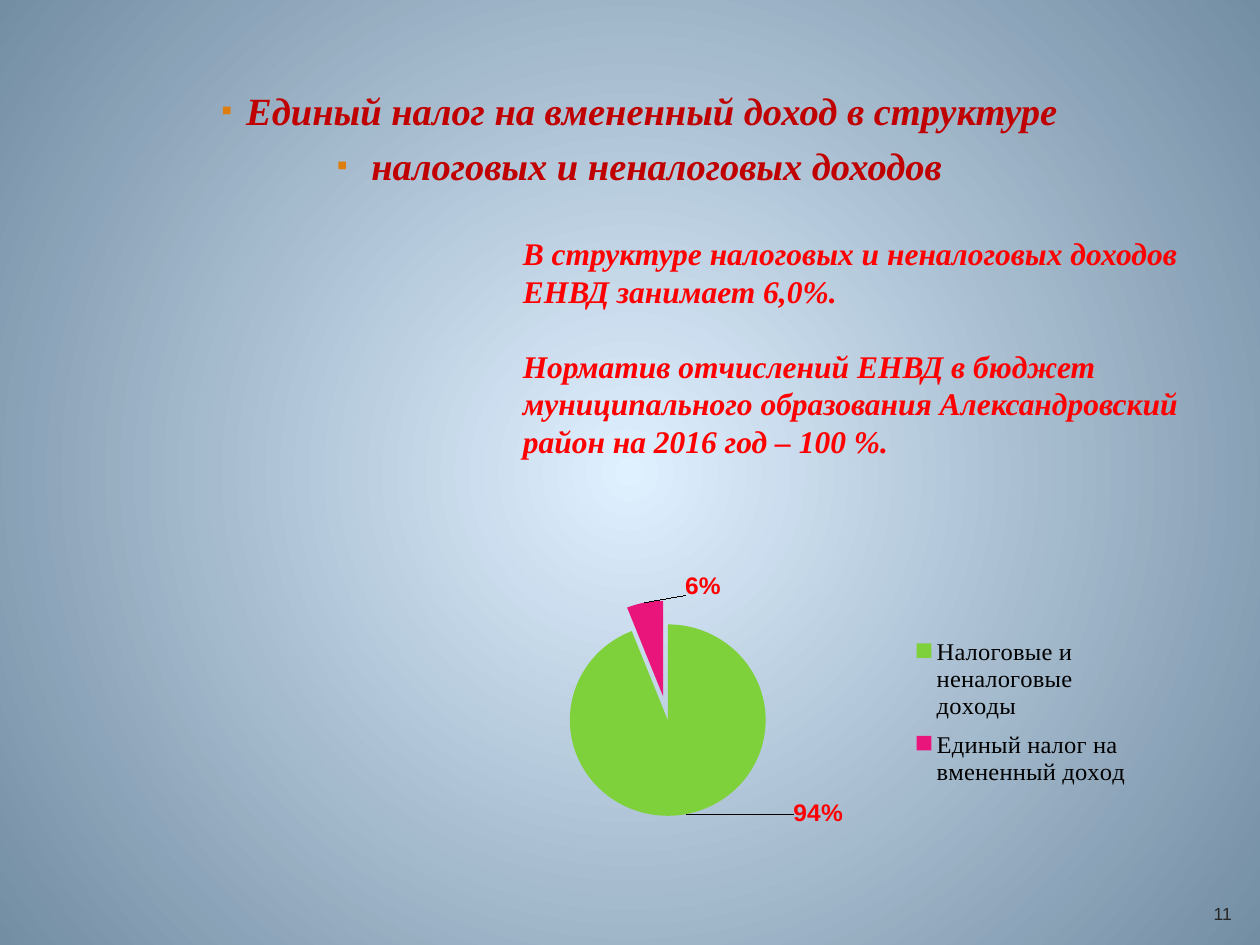
from lxml import etree
from pptx import Presentation
from pptx.chart.data import CategoryChartData
from pptx.dml.color import RGBColor
from pptx.enum.chart import XL_CHART_TYPE, XL_LEGEND_POSITION
from pptx.enum.text import MSO_ANCHOR, PP_ALIGN
from pptx.oxml import parse_xml
from pptx.oxml.ns import nsdecls, qn
from pptx.util import Cm, Pt

PIE = XL_CHART_TYPE.PIE
LEGEND_RIGHT = XL_LEGEND_POSITION.RIGHT
CENTER = PP_ALIGN.CENTER
LEFT = PP_ALIGN.LEFT
MIDDLE = MSO_ANCHOR.MIDDLE

SKY = RGBColor(0xDF, 0xF0, 0xFF)
SLATE = RGBColor(0x73, 0x8D, 0xA3)
DARK_RED = RGBColor(0xC0, 0x00, 0x00)
RED = RGBColor(0xFF, 0x00, 0x00)
ORANGE = RGBColor(0xDD, 0x7E, 0x0E)
GREEN = RGBColor(0x7F, 0xD1, 0x3B)
PINK = RGBColor(0xEA, 0x15, 0x7A)
BLACK = RGBColor(0x00, 0x00, 0x00)
CHARCOAL = RGBColor(0x26, 0x26, 0x26)

SERIF = "Times New Roman"
SANS = "Arial"


def style_font(font, name, size, color, bold=False, italic=False):
    font.name = name
    font.size = Pt(size)
    font.color.rgb = color
    font.bold = bold
    font.italic = italic


def paint_background(page):
    """Radial gradient from a light centre to darker corners."""
    fill = page.background.fill
    fill.gradient()
    for stop, color in zip(fill.gradient_stops, (SKY, SLATE)):
        stop.color.rgb = color
    gradient = page.background._cSld.find(".//" + qn("a:gradFill"))
    linear = gradient.find(qn("a:lin"))
    gradient.replace(linear, parse_xml(
        f'<a:path {nsdecls("a")} path="circle">'
        '<a:fillToRect l="50000" t="50000" r="50000" b="50000"/></a:path>'))


def add_text(page, area, lines, align, space_before, **style):
    """Text box with one run per line; space_before holds points per line."""
    box = page.shapes.add_textbox(*area)
    frame = box.text_frame
    frame.word_wrap = True
    for index, (line, space) in enumerate(zip(lines, space_before)):
        para = frame.paragraphs[0] if index == 0 else frame.add_paragraph()
        para.alignment = align
        para.space_before = Pt(space)
        span = para.add_run()
        span.text = line
        style_font(span.font, **style)
    return frame


def add_bullet(para):
    properties = para._p.get_or_add_pPr()
    properties.set("marL", str(Cm(0.5)))
    properties.set("indent", str(-Cm(0.5)))
    color = etree.SubElement(properties, qn("a:buClr"))
    etree.SubElement(color, qn("a:srgbClr"), val=str(ORANGE))
    etree.SubElement(properties, qn("a:buSzPct"), val="80000")
    etree.SubElement(properties, qn("a:buFont"), typeface=SANS)
    etree.SubElement(properties, qn("a:buChar"), char="▪")


def add_heading(page, area):
    frame = add_text(
        page, area,
        ["Единый налог на вмененный доход в структуре",
         " налоговых и неналоговых доходов"],
        CENTER, (5, 5), name=SERIF, size=22, color=DARK_RED,
        bold=True, italic=True)
    for para in frame.paragraphs:
        add_bullet(para)


def add_explanation(page, area):
    add_text(
        page, area,
        ["В структуре налоговых и неналоговых доходов ЕНВД занимает 6,0%.",
         "Норматив отчислений ЕНВД в бюджет муниципального образования "
         "Александровский район на 2016 год – 100 %."],
        LEFT, (0, 21), name=SERIF, size=18, color=RED, bold=True, italic=True)


def add_page_number(page, area):
    frame = add_text(page, area, ["11"], CENTER, (0,),
                     name=SANS, size=10, color=CHARCOAL)
    frame.vertical_anchor = MIDDLE


def manual_layout(x, y, width=None, height=None):
    """Chart layout in shares of the chart; without a size, it is an offset."""
    values = {"x": x, "y": y}
    modes = ""
    if width:
        values.update(w=width, h=height)
        modes = '<c:xMode val="edge"/><c:yMode val="edge"/>'
    parts = "".join(f'<c:{key} val="{value}"/>' for key, value in values.items())
    return parse_xml(f'<c:layout {nsdecls("c")}><c:manualLayout>{modes}{parts}'
                     '</c:manualLayout></c:layout>')


def set_layout(parent, layout, after=None):
    for old in parent.findall(qn("c:layout")):
        parent.remove(old)
    if after is None:
        parent.insert(0, layout)
    else:
        parent.find(qn(after)).addnext(layout)


def add_share_pie(page, area):
    data = CategoryChartData(number_format="0%")
    data.categories = ["Налоговые и неналоговые доходы",
                       "Единый налог на вмененный доход"]
    data.add_series("Series 1", (0.94, 0.06))
    chart = page.shapes.add_chart(PIE, *area, data).chart
    style_font(chart.font, SANS, 18, BLACK)
    chart.has_title = False
    chart.has_legend = True
    legend = chart.legend
    legend.position = LEGEND_RIGHT
    legend.include_in_layout = False
    style_font(legend.font, SERIF, 14, BLACK)
    set_layout(legend._element, manual_layout(0.67, 0.2, 0.32, 0.62),
               after="c:legendPos")
    plot_area = chart._chartSpace.find(".//" + qn("c:plotArea"))
    set_layout(plot_area, manual_layout(0.19, 0.19, 0.28, 0.7))

    plot = chart.plots[0]
    plot.vary_by_categories = True
    series = plot.series[0]
    labels = series.data_labels
    labels.show_value = True
    labels.number_format = "0%"
    labels.number_format_is_linked = False
    style_font(labels.font, SANS, 14, RED, bold=True)
    slices = ((GREEN, 0.15, -0.08), (PINK, 0.11, 0))
    for index, (color, shift_x, shift_y) in enumerate(slices):
        point = series.points[index]
        point.format.fill.solid()
        point.format.fill.fore_color.rgb = color
        style_font(point.data_label.font, SANS, 14, RED, bold=True)
        label = labels._element.findall(qn("c:dLbl"))[index]
        set_layout(label, manual_layout(shift_x, shift_y), after="c:idx")
    pink_slice = series._element.findall(qn("c:dPt"))[1]
    pink_slice.find(qn("c:spPr")).addprevious(
        parse_xml(f'<c:explosion {nsdecls("c")} val="25"/>'))


def main():
    deck = Presentation()
    deck.slide_width, deck.slide_height = Cm(25.4), Cm(19.05)
    page = deck.slides.add_slide(deck.slide_layouts[6])
    paint_background(page)
    add_heading(page, (Cm(1.14), Cm(1.63), Cm(23.5), Cm(14.02)))
    add_page_number(page, (Cm(24), Cm(17.91), Cm(1.3), Cm(1.02)))
    add_explanation(page, (Cm(10.29), Cm(4.6), Cm(13.72), Cm(4.88)))
    add_share_pie(page, (Cm(8.76), Cm(11.46), Cm(14.25), Cm(5.64)))
    deck.save("out.pptx")


if __name__ == "__main__":
    main()
